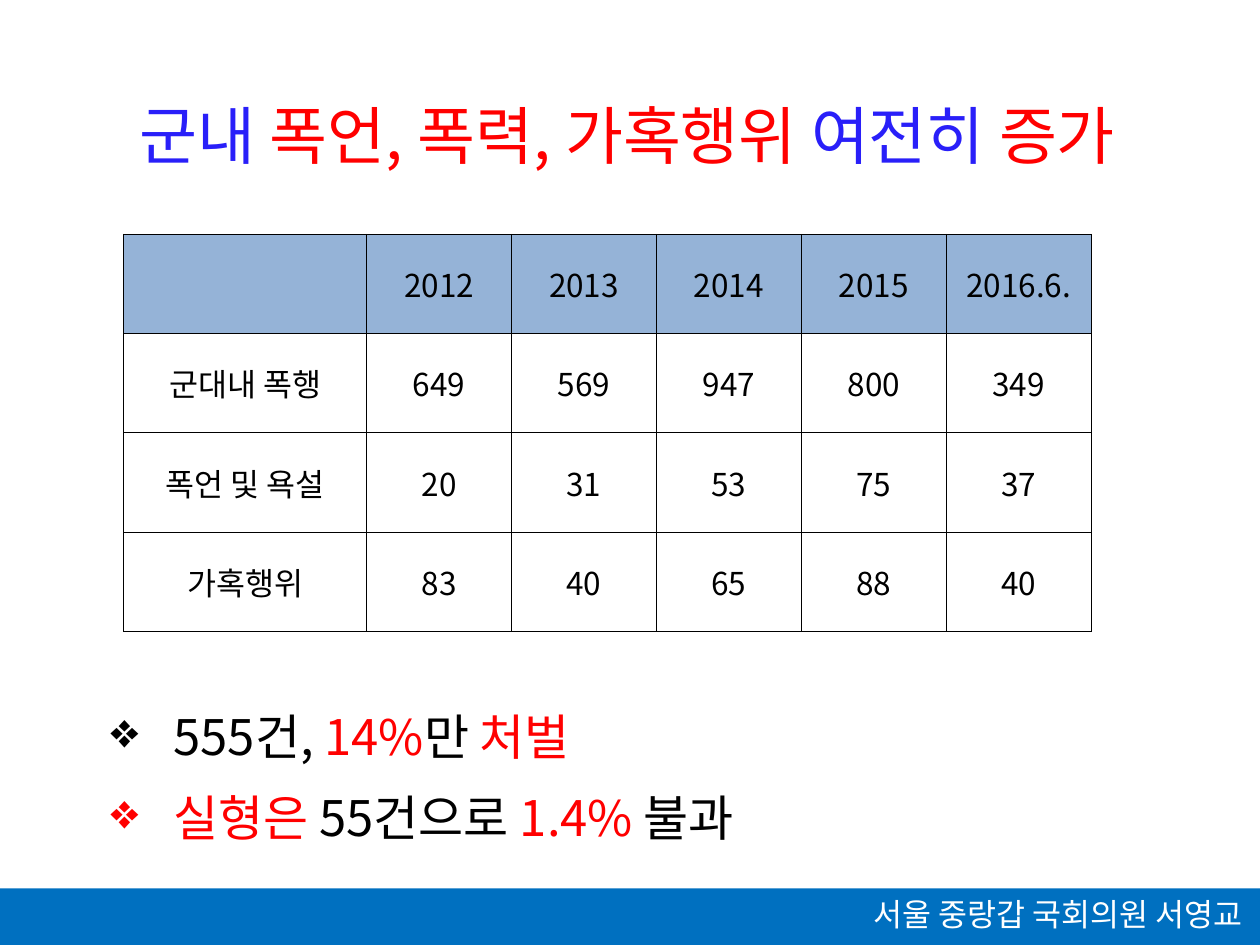
import pptx
import pptx.util
import pptx.dml.color
import pptx.enum.shapes
import pptx.enum.text
import pptx.oxml
import pptx.oxml.ns
from lxml import etree

Inches = pptx.util.Inches
Pt = pptx.util.Pt
RGBColor = pptx.dml.color.RGBColor
Align = pptx.enum.text.PP_ALIGN
Anchor = pptx.enum.text.MSO_ANCHOR
qn = pptx.oxml.ns.qn

FONT = "Noto Sans CJK KR"
BLUE = RGBColor(0x29, 0x1F, 0xF9)
RED = RGBColor(0xFF, 0x00, 0x00)
BLACK = RGBColor(0x00, 0x00, 0x00)
WHITE = RGBColor(0xFF, 0xFF, 0xFF)
HEADER_FILL = RGBColor(0x95, 0xB3, 0xD7)
FOOTER_FILL = RGBColor(0x00, 0x70, 0xC0)

TITLE = [("군내 ", BLUE), ("폭언, 폭력, 가혹행위 ", RED), ("여전히 ", BLUE), ("증가", RED)]
CASES = [
    ["", "2012", "2013", "2014", "2015", "2016.6."],
    ["군대내 폭행", "649", "569", "947", "800", "349"],
    ["폭언 및 욕설", "20", "31", "53", "75", "37"],
    ["가혹행위", "83", "40", "65", "88", "40"],
]
FINDINGS = [
    [("555건, ", BLACK), ("14%", RED), ("만 ", BLACK), ("처벌", RED)],
    [("실형은 ", RED), ("55건으로 ", BLACK), ("1.4% ", RED), ("불과", BLACK)],
]


def apply_format(target, values):
    for name, value in values.items():
        setattr(target, name, value)


def write_spans(para, spans, size):
    for text, color in spans:
        span = para.add_run()
        span.text = text
        apply_format(span.font, {"name": FONT, "size": Pt(size)})
        span.font.color.rgb = color
        east_asian = etree.SubElement(span.font._element, qn("a:ea"))
        east_asian.set("typeface", FONT)


def add_text_box(page, box, wrap=True):
    frame = page.shapes.add_textbox(*map(Inches, box)).text_frame
    frame.word_wrap = wrap
    return frame


def add_title(page, box):
    para = add_text_box(page, box, wrap=False).paragraphs[0]
    para.alignment = Align.CENTER
    write_spans(para, TITLE, 36)


def add_borders(cell):
    properties = cell._tc.get_or_add_tcPr()
    for position, side in enumerate(("lnL", "lnR", "lnT", "lnB")):
        line = pptx.oxml.parse_xml(
            f'<a:{side} xmlns:a="http://schemas.openxmlformats.org/drawingml/2006/main" '
            f'w="{Pt(0.56)}"><a:solidFill><a:srgbClr val="{BLACK}"/></a:solidFill></a:{side}>'
        )
        properties.insert(position, line)


def add_case_table(page, box):
    left, top, width, height = box
    rows, columns = len(CASES), len(CASES[0])
    label_width = 1.93
    table = page.shapes.add_table(rows, columns, *map(Inches, box)).table
    apply_format(table, {"first_row": False, "horz_banding": False})
    for index, column in enumerate(table.columns):
        year_width = (width - label_width) / (columns - 1)
        column.width = Inches(year_width if index else label_width)
    for row_index, values in enumerate(CASES):
        table.rows[row_index].height = Inches(height / rows)
        for column_index, value in enumerate(values):
            cell = table.cell(row_index, column_index)
            cell.vertical_anchor = Anchor.MIDDLE
            cell.fill.solid()
            cell.fill.fore_color.rgb = WHITE if row_index else HEADER_FILL
            add_borders(cell)
            para = cell.text_frame.paragraphs[0]
            para.alignment = Align.CENTER
            if value:
                write_spans(para, [(value, BLACK)], 18)


def add_findings(page, box):
    frame = add_text_box(page, box)
    for index, spans in enumerate(FINDINGS):
        para = frame.add_paragraph() if index else frame.paragraphs[0]
        properties = para._p.get_or_add_pPr()
        properties.set("marL", str(Inches(0.5)))
        properties.set("indent", str(-Inches(0.5)))
        bullet = etree.SubElement(properties, qn("a:buChar"))
        bullet.set("char", "❖")
        if index:
            para.space_before = Pt(12.5)
        write_spans(para, spans, 28)


def add_footer(page, box):
    left, top, width, height = box
    band = page.shapes.add_shape(
        pptx.enum.shapes.MSO_SHAPE.RECTANGLE, *map(Inches, box)
    )
    band.shadow.inherit = False
    band.fill.solid()
    band.fill.fore_color.rgb = FOOTER_FILL
    band.line.fill.background()
    para = add_text_box(page, (left + 6.02, top, 3.94, 0.41)).paragraphs[0]
    para.alignment = Align.RIGHT
    write_spans(para, [("서울 중랑갑 국회의원 서영교", WHITE)], 18)


def main():
    deck = pptx.Presentation()
    apply_format(deck, {"slide_width": Inches(10), "slide_height": Inches(7.5)})
    page = deck.slides.add_slide(deck.slide_layouts[6])
    add_title(page, (0.48, 0.72, 9, 0.71))
    add_case_table(page, (0.98, 1.86, 7.68, 3.15))
    add_findings(page, (0.78, 5.56, 8.35, 1.31))
    add_footer(page, (0, 7.05, 10, 0.45))
    deck.save("out.pptx")


if __name__ == "__main__":
    main()
